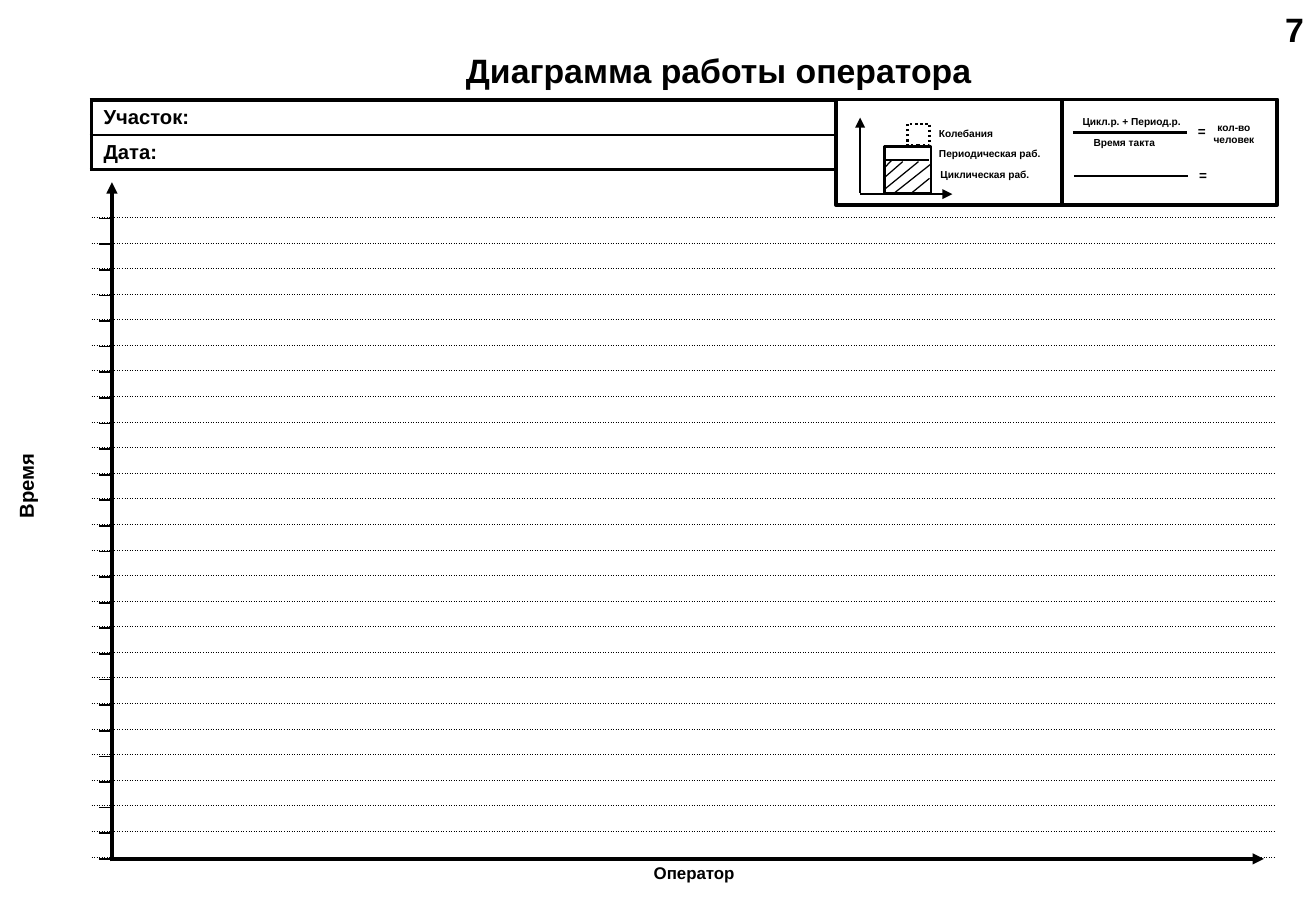
"""Builds the blank operator work chart form."""
import pptx
import pptx.dml.color
import pptx.enum.dml
import pptx.enum.shapes
import pptx.enum.text
import pptx.oxml
import pptx.oxml.ns
import pptx.util

Cm, Pt = pptx.util.Cm, pptx.util.Pt
color = pptx.dml.color.RGBColor.from_string
qn = pptx.oxml.ns.qn
ALIGN = pptx.enum.text.PP_ALIGN
MIDDLE = pptx.enum.text.MSO_ANCHOR.MIDDLE
DOTTED = pptx.enum.dml.MSO_LINE.ROUND_DOT
NS = 'xmlns:a="http://schemas.openxmlformats.org/drawingml/2006/main"'
BLACK = "000000"


def style_text(tf, text, size, align=ALIGN.LEFT):
    tf.word_wrap = True
    tf.text = text
    p = tf.paragraphs[0]
    p.alignment = align
    r = p.runs[0]
    r.font.name = "Arial"
    r.font.size = Pt(size)
    r.font.bold = True
    r.font.color.rgb = color(BLACK)


def set_borders(cell, borders):
    tc_pr = cell._tc.get_or_add_tcPr()
    for side, width, dash in borders:
        tc_pr.append(pptx.oxml.parse_xml(
            f'<a:ln{side} {NS} w="{Pt(width)}"><a:solidFill><a:srgbClr val="{BLACK}"/>'
            f'</a:solidFill><a:prstDash val="{dash}"/></a:ln{side}>'))
    cell.fill.background()


prs = pptx.Presentation()
prs.slide_width, prs.slide_height = Cm(27.51), Cm(19.05)
s = prs.slides.add_slide(prs.slide_layouts[5])

title = s.shapes.title
title.left, title.top, title.width, title.height = Cm(0), Cm(0.73), Cm(27.51), Cm(1.47)
tf = title.text_frame
style_text(tf, "Диаграмма работы оператора", 20, ALIGN.CENTER)
tf.vertical_anchor = MIDDLE
tf.margin_left = Cm(2.79)
tf.margin_right = Cm(0.25)

header = s.shapes.add_table(2, 1, Cm(1.91), Cm(2.09), Cm(15.57), Cm(1.46)).table
grid = s.shapes.add_table(26, 1, Cm(1.93), Cm(4.01), Cm(24.71), Cm(13.92)).table
for table in (header, grid):
    table.first_row = table.horz_banding = False

for i, label in enumerate(["Участок:", "Дата:"]):
    cell = header.cell(i, 0)
    style_text(cell.text_frame, label, 12)
    cell.vertical_anchor = MIDDLE
    cell.margin_top = cell.margin_bottom = Cm(0.1)
    top, bottom = [(2.25, 1), (1, 2.25)][i]
    set_borders(cell, [("L", 2.25, "solid"), ("R", 2.25, "solid"),
                       ("T", top, "solid"), ("B", bottom, "solid")])

for i in range(26):
    cell = grid.cell(i, 0)
    cell.margin_top = cell.margin_bottom = 0
    cell.text_frame.paragraphs[0]._p.get_or_add_endParaRPr().set("sz", "600")
    rules = [("B", 0.5, "dot")]
    if i:
        rules.insert(0, ("T", 0.5, "dot"))
    set_borders(cell, rules)

boxes = [
    (17.48, 2.08, 4.72, 2.21, 2.25, None),
    (22.2, 2.08, 4.5, 2.21, 2.25, None),
    (18.49, 3.07, 0.97, 0.97, 1.5, None),
    (18.97, 2.59, 0.46, 0.46, 1.5, DOTTED),
]
for x, y, w, h, weight, dash in boxes:
    sp = s.shapes.add_shape(pptx.enum.shapes.MSO_SHAPE.RECTANGLE, Cm(x), Cm(y), Cm(w), Cm(h))
    sp.shadow.inherit = False
    sp.fill.background()
    sp.line.color.rgb = color(BLACK)
    sp.line.width = Pt(weight)
    sp.line.dash_style = dash

lines = [
    (2.34, 17.96, 26.42, 17.96, 2.25, True),
    (2.34, 18.01, 2.34, 3.81, 2.25, True),
    (17.98, 4.04, 17.98, 2.46, 1.5, True),
    (17.98, 4.06, 19.91, 4.06, 1.5, True),
    (18.49, 3.35, 19.43, 3.35, 1.5, False),
    (22.43, 2.77, 24.82, 2.77, 1.5, False),
    (22.45, 3.68, 24.84, 3.68, 1.5, False),
    (18.64, 3.35, 18.49, 3.51, 0.75, False),
    (18.87, 3.38, 18.47, 3.73, 0.75, False),
    (19.2, 3.38, 18.49, 3.96, 0.75, False),
    (19.46, 3.43, 18.69, 4.04, 0.75, False),
    (19.43, 3.73, 19.05, 4.04, 0.75, False),
]
tick_step = (17.96 - 4.57) / 25
for i in range(26):
    y = 4.57 + i * tick_step
    lines.append((2.32, y, 2.06, y, 1, False))
for x1, y1, x2, y2, weight, arrow in lines:
    cn = s.shapes.add_connector(pptx.enum.shapes.MSO_CONNECTOR.STRAIGHT,
                                Cm(x1), Cm(y1), Cm(x2), Cm(y2))
    cn.line.color.rgb = color(BLACK)
    cn.line.width = Pt(weight)
    if arrow:
        cn.line._get_or_add_ln().append(pptx.oxml.parse_xml(f'<a:tailEnd {NS} type="triangle"/>'))
    sp_pr = cn._element.spPr
    sp_pr.append(sp_pr.makeelement(qn("a:effectLst"), {}))

texts = [
    ("Оператор", 12.12, 17.91, 4.78, 0.69, 10, ALIGN.CENTER, 0),
    ("Время", -2.51, 9.78, 6.1, 0.76, 12, ALIGN.CENTER, 270),
    ("Колебания", 19.38, 2.54, 2.49, 0.51, 6, ALIGN.LEFT, 0),
    ("Периодическая раб.", 19.38, 2.95, 2.82, 0.51, 6, ALIGN.LEFT, 0),
    ("Циклическая раб.", 19.41, 3.4, 2.72, 0.51, 6, ALIGN.LEFT, 0),
    ("Цикл.р. + Период.р.", 22.38, 2.29, 2.72, 0.51, 6, ALIGN.LEFT, 0),
    ("Время такта", 22.61, 2.72, 2.72, 0.51, 6, ALIGN.LEFT, 0),
    ("кол-во человек", 24.97, 2.41, 1.65, 0.76, 6, ALIGN.CENTER, 0),
    ("=", 24.82, 3.38, 0.84, 0.58, 8, ALIGN.LEFT, 0),
    ("=", 24.79, 2.46, 0.97, 0.58, 8, ALIGN.LEFT, 0),
    ("7", 0.84, 0, 26.67, 1.22, 20, ALIGN.RIGHT, 0),
]
for text, x, y, w, h, size, align, rotation in texts:
    sp = s.shapes.add_textbox(Cm(x), Cm(y), Cm(w), Cm(h))
    sp.rotation = rotation
    style_text(sp.text_frame, text, size, align)
    sp.text_frame.vertical_anchor = MIDDLE

prs.save("out.pptx")
